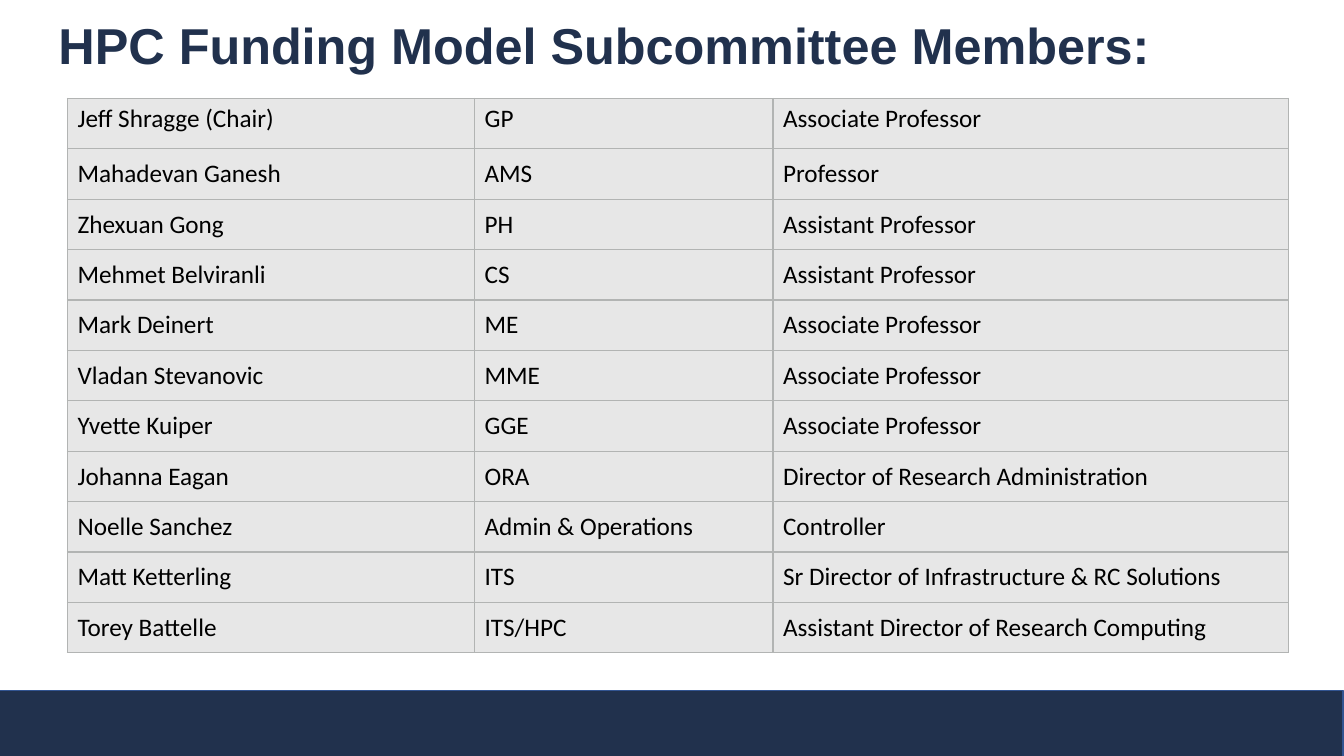
from typing import NamedTuple

from lxml.etree import SubElement
from pptx import Presentation
from pptx.dml.color import RGBColor
from pptx.enum.shapes import MSO_SHAPE as Preset
from pptx.enum.text import MSO_ANCHOR as Anchor, MSO_AUTO_SIZE as AutoSize, PP_ALIGN as Align
from pptx.oxml.ns import qn
from pptx.util import Cm, Pt

NAVY = "21314D"
CELL_FILL = "E7E7E7"
CELL_BORDER = "B2B4B3"
COLUMN_WIDTHS = (10.26, 7.52, 13)
ROW_HEIGHT = 1.27


class Member(NamedTuple):
    name: str
    unit: str
    position: str


class RunStyle(NamedTuple):
    font: str
    size: float
    color: str
    bold: bool = False


MEMBERS = [
    Member("Jeff Shragge (Chair)", "GP", "Associate Professor"),
    Member("Mahadevan Ganesh", "AMS", "Professor"),
    Member("Zhexuan Gong", "PH", "Assistant Professor"),
    Member("Mehmet Belviranli", "CS", "Assistant Professor"),
    Member("Mark Deinert", "ME", "Associate Professor"),
    Member("Vladan Stevanovic", "MME", "Associate Professor"),
    Member("Yvette Kuiper", "GGE", "Associate Professor"),
    Member("Johanna Eagan", "ORA", "Director of Research Administration"),
    Member("Noelle Sanchez", "Admin & Operations", "Controller"),
    Member("Matt Ketterling", "ITS", "Sr Director of Infrastructure & RC Solutions"),
    Member("Torey Battelle", "ITS/HPC", "Assistant Director of Research Computing"),
]
TITLE_STYLE = RunStyle("Arial", 36, NAVY, True)
CELL_STYLE = RunStyle("Calibri", 18, "000000")


def rgb(color: str) -> RGBColor:
    return RGBColor.from_string(color)


def add_run(paragraph, text: str, style: RunStyle) -> None:
    run = paragraph.add_run()
    run.text = text
    run.font.name = style.font
    run.font.size = Pt(style.size)
    run.font.bold = style.bold
    run.font.color.rgb = rgb(style.color)


def set_borders(cell, color: str) -> None:
    """Draw a one-point line on all four sides; call before filling the cell."""
    properties = cell._tc.get_or_add_tcPr()
    for side in ("a:lnL", "a:lnR", "a:lnT", "a:lnB"):
        line = SubElement(properties, qn(side), w=str(Pt(1)))
        SubElement(SubElement(line, qn("a:solidFill")), qn("a:srgbClr"), val=color)


def add_footer_bar(slide) -> None:
    bar = slide.shapes.add_shape(Preset.RECTANGLE, Cm(-0.03), Cm(17.4), Cm(33.88), Cm(1.68))
    bar.shadow.inherit = False
    bar.fill.solid()
    bar.fill.fore_color.rgb = rgb(NAVY)
    bar.line.color.rgb = rgb("325491")
    bar.line.width = Pt(1)


def format_title(title) -> None:
    title.left, title.top, title.width, title.height = Cm(1.22), Cm(0.6), Cm(32.39), Cm(1.24)
    frame = title.text_frame
    frame.auto_size = AutoSize.NONE
    frame.word_wrap = True
    frame.vertical_anchor = Anchor.MIDDLE
    paragraph = frame.paragraphs[0]
    paragraph.alignment = Align.LEFT
    paragraph.line_spacing = 0.9
    add_run(paragraph, "HPC Funding Model Subcommittee Members:", TITLE_STYLE)


def add_member_table(slide) -> None:
    table = slide.shapes.add_table(
        len(MEMBERS), len(COLUMN_WIDTHS), Cm(1.7), Cm(2.48),
        Cm(sum(COLUMN_WIDTHS)), Cm(ROW_HEIGHT * len(MEMBERS)),
    ).table
    table.first_row = table.horz_banding = False
    for column, width in zip(table.columns, COLUMN_WIDTHS):
        column.width = Cm(width)
    for row_index, (row, member) in enumerate(zip(table.rows, MEMBERS)):
        row.height = Cm(ROW_HEIGHT)
        for cell, text in zip(row.cells, member):
            set_borders(cell, CELL_BORDER)
            cell.fill.solid()
            cell.fill.fore_color.rgb = rgb(CELL_FILL)
            cell.vertical_anchor = Anchor.MIDDLE if row_index else Anchor.TOP
            add_run(cell.text_frame.paragraphs[0], text, CELL_STYLE)


def main() -> None:
    deck = Presentation()
    deck.slide_width, deck.slide_height = Cm(33.87), Cm(19.05)
    slide = deck.slides.add_slide(deck.slide_layouts.get_by_name("Title Only"))
    add_footer_bar(slide)
    format_title(slide.shapes.title)
    add_member_table(slide)
    deck.save("out.pptx")


if __name__ == "__main__":
    main()
